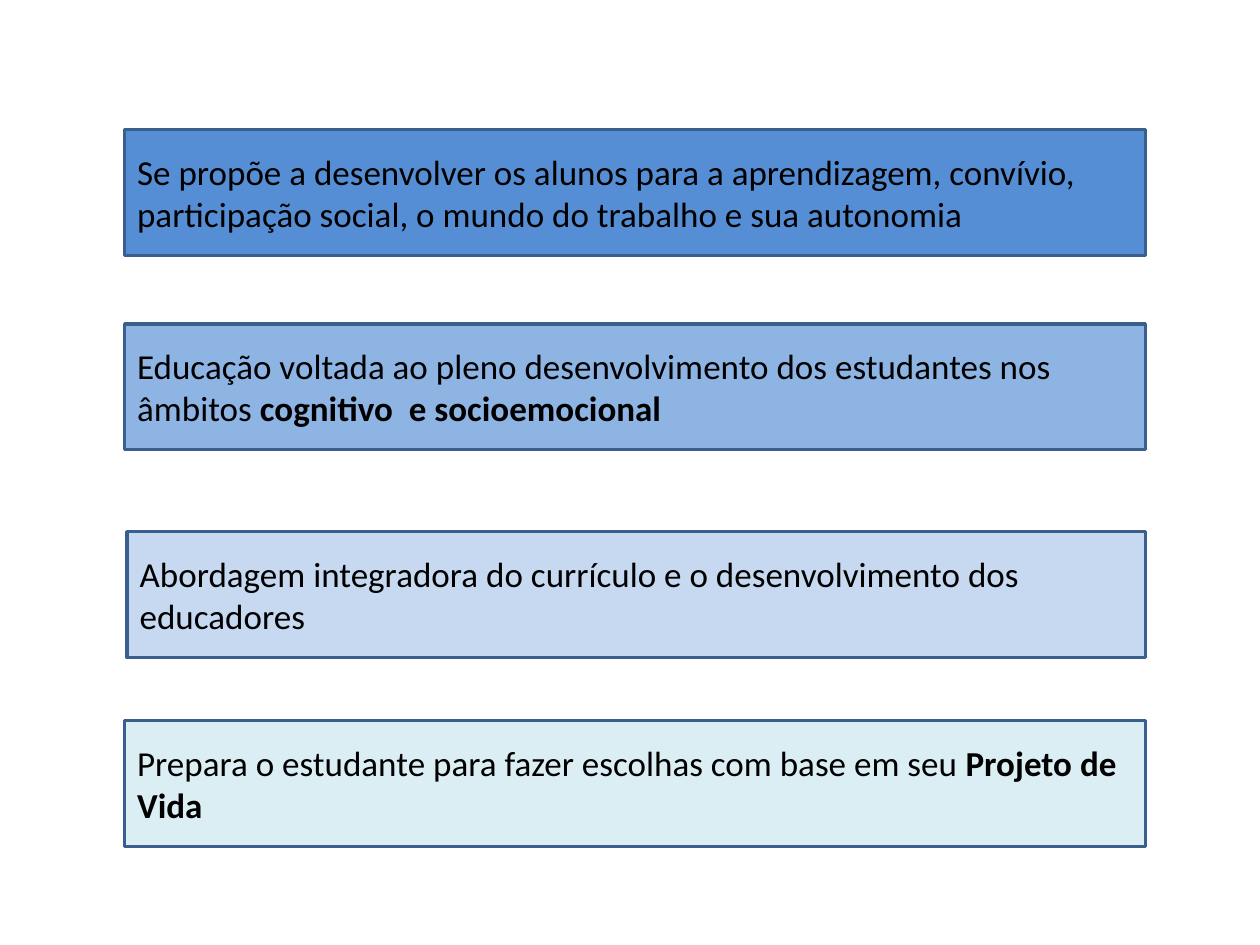
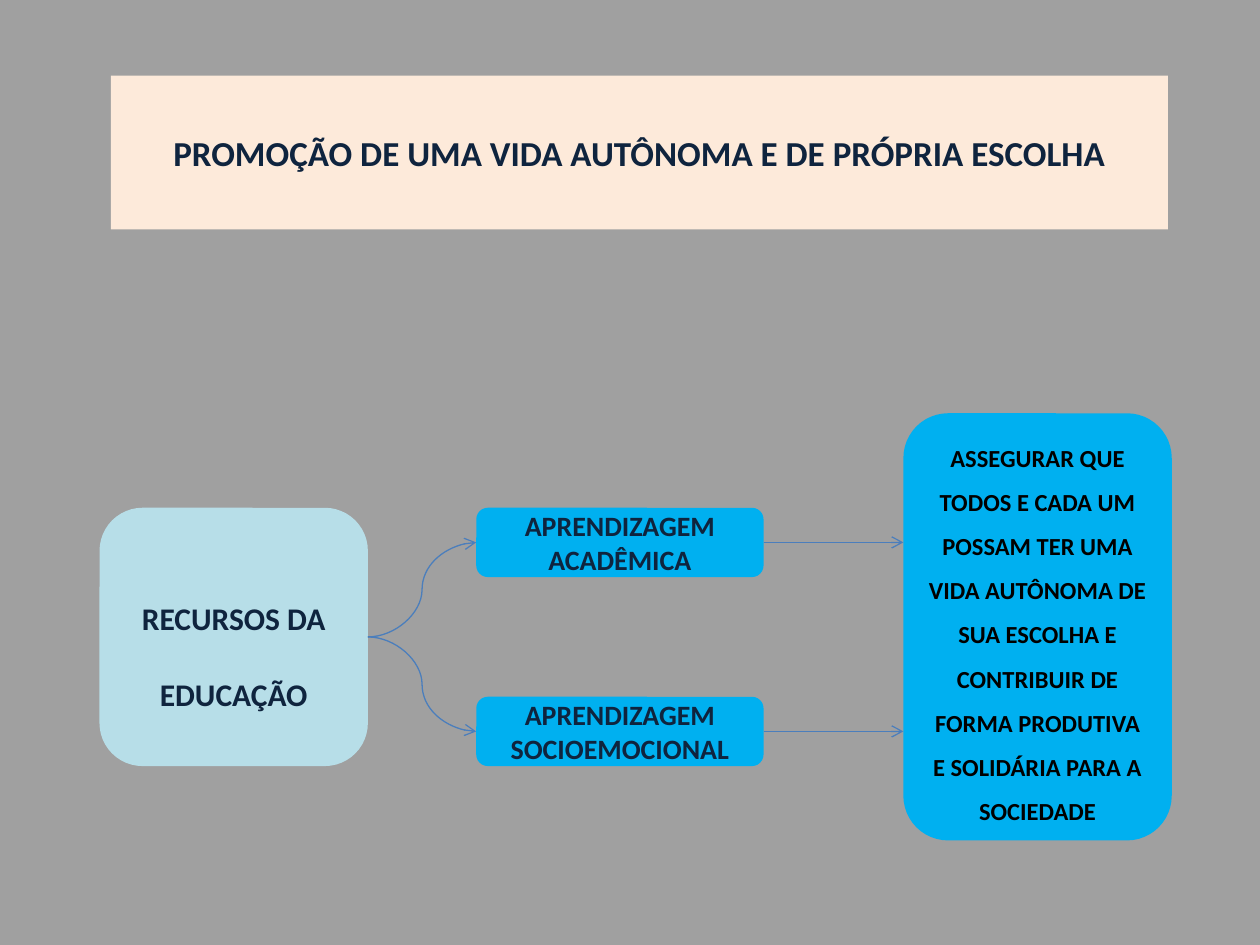
import dataclasses

import pptx
import pptx.dml.color
import pptx.enum.shapes
import pptx.enum.text
import pptx.oxml
import pptx.oxml.ns
import pptx.util

Inches = pptx.util.Inches
Pt = pptx.util.Pt
Shape = pptx.enum.shapes.MSO_SHAPE
Connector = pptx.enum.shapes.MSO_CONNECTOR
Align = pptx.enum.text.PP_ALIGN


@dataclasses.dataclass(frozen=True)
class Theme:
    font: str = "Calibri"
    black: str = "000000"
    navy: str = "0F243E"
    gray: str = "A0A0A0"
    outline: str = "3A5F8C"
    arrow: str = "4B7EBC"
    peach: str = "FDEADA"
    ice: str = "B7DEE8"
    cyan: str = "00B0F0"
    statement_size: int = 20
    source_size: int = 18
    branch_size: int = 16
    goal_size: int = 14


THEME = Theme()
WIDTH, HEIGHT = 10, 7.5
STATEMENT_RIGHT, STATEMENT_HEIGHT = 9.09, 1

STATEMENTS = [
    (0.99, 1.03, "558ED5", [("Se propõe a desenvolver os alunos para a aprendizagem, convívio, "
                             "participação social, o mundo do trabalho e sua autonomia", False)]),
    (0.99, 2.57, "8EB4E3", [("Educação voltada ao pleno desenvolvimento dos estudantes nos âmbitos ", False),
                            ("cognitivo  e socioemocional", True)]),
    (1.01, 4.22, "C6D9F1", [("Abordagem integradora do currículo e o desenvolvimento dos educadores", False)]),
    (0.99, 5.72, "DBEEF4", [("Prepara o estudante para fazer escolhas com base em seu ", False),
                            ("Projeto de Vida", True)]),
]

TITLE = "PROMOÇÃO DE UMA VIDA AUTÔNOMA E DE PRÓPRIA ESCOLHA"
SOURCE = "RECURSOS DA EDUCAÇÃO"
BRANCHES = ["APRENDIZAGEM ACADÊMICA", "APRENDIZAGEM SOCIOEMOCIONAL"]
GOAL = ("ASSEGURAR QUE TODOS E CADA UM POSSAM TER UMA VIDA AUTÔNOMA DE SUA ESCOLHA "
        "E CONTRIBUIR DE FORMA PRODUTIVA E SOLIDÁRIA PARA A SOCIEDADE")

TITLE_AREA = (0.88, 0.6, 8.39, 1.22)
SOURCE_AREA = (0.79, 4.03, 2.13, 2.05)
GOAL_AREA = (7.17, 3.28, 2.13, 3.39)
BRANCH_LEFT, BRANCH_WIDTH, BRANCH_HEIGHT = 3.78, 2.28, 0.55
LEFT_SITE, RIGHT_SITE = 1, 3


def color(code):
    return pptx.dml.color.RGBColor.from_string(code)


def paint(box, fill, outline=None):
    box.fill.solid()
    box.fill.fore_color.rgb = color(fill)
    if outline:
        box.line.color.rgb = color(outline)
        box.line.width = Pt(2)
    else:
        box.line.fill.background()


def write(box, spans, size, ink, align=Align.CENTER, spacing=1):
    frame = box.text_frame
    frame.word_wrap = True
    frame.auto_size = pptx.enum.text.MSO_AUTO_SIZE.NONE
    frame.vertical_anchor = pptx.enum.text.MSO_ANCHOR.MIDDLE
    para = frame.paragraphs[0]
    para.alignment = align
    para.line_spacing = spacing
    for text, bold in spans:
        span = para.add_run()
        span.text = text
        span.font.name = THEME.font
        span.font.size = Pt(size)
        span.font.bold = bold
        span.font.color.rgb = color(ink)


def add_box(page, kind, area, fill, outline=None):
    box = page.shapes.add_shape(kind, *map(Inches, area))
    box.shadow.inherit = False
    paint(box, fill, outline)
    return box


def add_node(page, area, fill, text, size, ink=THEME.navy, spacing=1):
    box = add_box(page, Shape.ROUNDED_RECTANGLE, area, fill)
    write(box, [(text, True)], size, ink, spacing=spacing)
    return box


def add_arrow(page, kind, start, end):
    arrow = page.shapes.add_connector(kind, *start, *end)
    arrow.line.color.rgb = color(THEME.arrow)
    arrow.line.width = Pt(0.75)
    head = pptx.oxml.parse_xml(f'<a:tailEnd {pptx.oxml.ns.nsdecls("a")} type="arrow"/>')
    arrow.line._get_or_add_ln().append(head)
    effects = pptx.oxml.parse_xml(f'<a:effectLst {pptx.oxml.ns.nsdecls("a")}/>')
    arrow._element.spPr.append(effects)
    return arrow


def middle(box):
    return box.top + box.height // 2


def build_statements(deck):
    page = deck.slides.add_slide(deck.slide_layouts.get_by_name("Blank"))
    for left, top, fill, spans in STATEMENTS:
        area = (left, top, STATEMENT_RIGHT - left, STATEMENT_HEIGHT)
        box = add_box(page, Shape.RECTANGLE, area, fill, THEME.outline)
        write(box, spans, THEME.statement_size, THEME.black, Align.LEFT)


def build_flow(deck):
    page = deck.slides.add_slide(deck.slide_layouts.get_by_name("Title Only"))
    page.background.fill.solid()
    page.background.fill.fore_color.rgb = color(THEME.gray)

    title = page.shapes.title
    title.left, title.top, title.width, title.height = map(Inches, TITLE_AREA)
    paint(title, THEME.peach)
    write(title, [(TITLE, True)], THEME.statement_size, THEME.navy)

    source = add_node(page, SOURCE_AREA, THEME.ice, SOURCE, THEME.source_size, spacing=2)
    goal = add_node(page, GOAL_AREA, THEME.cyan, GOAL, THEME.goal_size, THEME.black, 1.5)

    _, source_top, _, source_height = SOURCE_AREA
    step = (source_height - BRANCH_HEIGHT) / (len(BRANCHES) - 1)
    for row, text in enumerate(BRANCHES):
        area = (BRANCH_LEFT, source_top + row * step, BRANCH_WIDTH, BRANCH_HEIGHT)
        branch = add_node(page, area, THEME.cyan, text, THEME.branch_size)
        level = middle(branch)
        curve = add_arrow(page, Connector.CURVE,
                          (source.left + source.width, middle(source)), (branch.left, level))
        curve.begin_connect(source, RIGHT_SITE)
        curve.end_connect(branch, LEFT_SITE)
        add_arrow(page, Connector.STRAIGHT,
                  (branch.left + branch.width, level), (goal.left, level))


def main():
    deck = pptx.Presentation()
    deck.slide_width, deck.slide_height = Inches(WIDTH), Inches(HEIGHT)
    build_statements(deck)
    build_flow(deck)
    deck.save("out.pptx")


if __name__ == "__main__":
    main()
